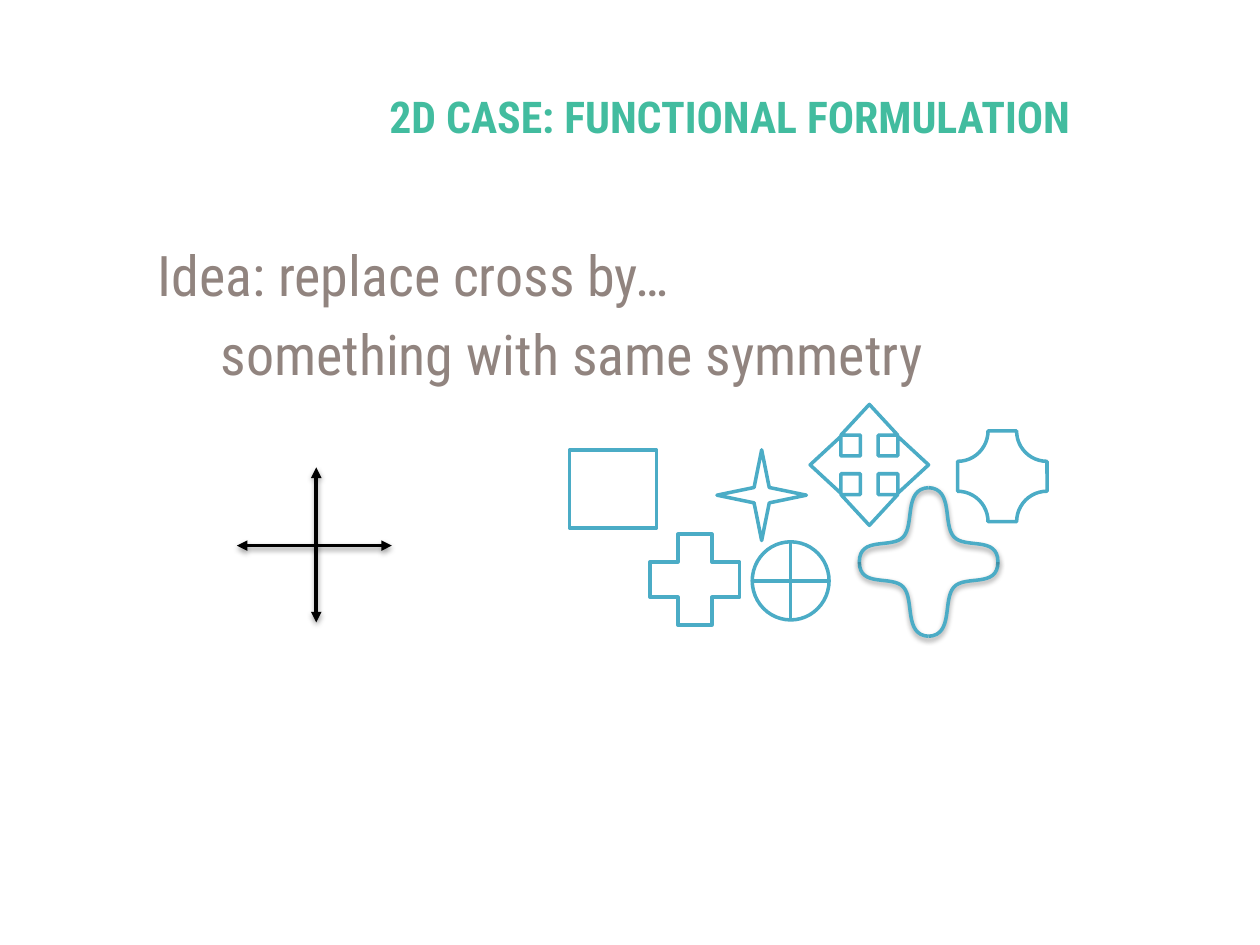
from dataclasses import dataclass
from itertools import product

from lxml import etree
from pptx import Presentation
from pptx.dml.color import RGBColor
from pptx.enum.shapes import MSO_CONNECTOR, MSO_SHAPE
from pptx.enum.text import MSO_ANCHOR, PP_ALIGN
from pptx.oxml import parse_xml
from pptx.oxml.ns import nsdecls, qn
from pptx.util import Emu, Pt

STRAIGHT = MSO_CONNECTOR.STRAIGHT
RECT = MSO_SHAPE.RECTANGLE
PLAQUE = MSO_SHAPE.PLAQUE
PLUS = MSO_SHAPE.CROSS
QUAD_ARROW = MSO_SHAPE.QUAD_ARROW
CIRCLE_CROSS = MSO_SHAPE.FLOWCHART_OR
STAR = MSO_SHAPE.STAR_4_POINT
LEFT = PP_ALIGN.LEFT
MIDDLE, TOP = MSO_ANCHOR.MIDDLE, MSO_ANCHOR.TOP
PX = 9144


@dataclass(frozen=True)
class Theme:
    font: str = "Roboto Condensed"
    title: RGBColor = RGBColor(0x42, 0xBC, 0x9F)
    body: RGBColor = RGBColor(0x91, 0x84, 0x7F)
    outline: RGBColor = RGBColor(0x4B, 0xAC, 0xC6)
    axis: RGBColor = RGBColor(0, 0, 0)
    paper: RGBColor = RGBColor(0xFF, 0xFF, 0xFF)
    title_size: Pt = Pt(25)
    body_size: Pt = Pt(32)
    stroke: Pt = Pt(2)


@dataclass(frozen=True)
class Symbol:
    kind: MSO_SHAPE
    x: int
    y: int
    w: int
    h: int
    adj: tuple[float, ...] = ()


THEME = Theme()
INDENTS = (0, 50)
AXES = ((188, 433, 311, 433), (251, 494, 251, 371))
CENTER = (737, 446)
LOBE = ((0, 59), (20, 58), (11, 30), (20, 20), (29, 10), (55, 21), (55, 0))
SYMBOLS = (
    Symbol(RECT, 452, 357, 69, 62),
    Symbol(PLAQUE, 760, 342, 71, 72, (0.34,)),
    Symbol(PLUS, 516, 424, 71, 72, (0.31,)),
    Symbol(QUAD_ARROW, 643, 321, 94, 96, (0.15, 0.24, 0.26)),
    Symbol(CIRCLE_CROSS, 597, 430, 61, 62),
    Symbol(STAR, 569, 357, 71, 72, (0.12,)),
)


def px(n: int) -> Emu:
    return Emu(n * PX)


def place(sp, x: int, y: int, w: int, h: int) -> None:
    sp.left, sp.top, sp.width, sp.height = px(x), px(y), px(w), px(h)


def format_text(sp, text: str, size: Pt, color: RGBColor, bold: bool, anchor) -> None:
    tf = sp.text_frame
    tf.text = text
    tf.word_wrap = True
    tf.vertical_anchor = anchor
    for p in tf.paragraphs:
        p.alignment = LEFT
        for r in p.runs:
            r.font.name = THEME.font
            r.font.size = size
            r.font.bold = bold
            r.font.color.rgb = color


def set_line(sp, color: RGBColor) -> None:
    sp.line.color.rgb = color
    sp.line.width = THEME.stroke


def add_shadow(sp) -> None:
    sp.element.spPr.append(parse_xml(
        f'<a:effectLst {nsdecls("a")}>'
        '<a:outerShdw blurRad="40000" dist="20000" dir="5400000" rotWithShape="0">'
        '<a:srgbClr val="000000"><a:alpha val="38000"/></a:srgbClr>'
        '</a:outerShdw></a:effectLst>'))


def add_axis(shapes, ends: tuple[int, ...]) -> None:
    cxn = shapes.add_connector(STRAIGHT, *map(px, ends))
    set_line(cxn, THEME.axis)
    ln = cxn.element.spPr.find(qn("a:ln"))
    for tag in ("a:headEnd", "a:tailEnd"):
        etree.SubElement(ln, qn(tag), type="triangle")
    add_shadow(cxn)


def curve_segments(sp) -> None:
    for outline in sp.element.iter(qn("a:path")):
        lines = outline.findall(qn("a:lnTo"))
        for i in range(0, len(lines), 3):
            curve = etree.SubElement(outline, qn("a:cubicBezTo"))
            for line in lines[i:i + 3]:
                curve.append(line[0])
                outline.remove(line)


def add_lobe(shapes, sx: int, sy: int) -> None:
    cx, cy = CENTER
    start, *rest = [(px(cx + sx * x), px(cy + sy * y)) for x, y in LOBE]
    builder = shapes.build_freeform(*start)
    builder.add_line_segments(rest, close=False)
    sp = builder.convert_to_shape()
    curve_segments(sp)
    sp.fill.background()
    set_line(sp, THEME.outline)
    add_shadow(sp)


def add_symbol(shapes, symbol: Symbol) -> None:
    box = map(px, (symbol.x, symbol.y, symbol.w, symbol.h))
    sp = shapes.add_shape(symbol.kind, *box)
    for i, value in enumerate(symbol.adj):
        sp.adjustments[i] = value
    sp.fill.solid()
    sp.fill.fore_color.rgb = THEME.paper
    set_line(sp, THEME.outline)
    sp.shadow.inherit = False


def add_texts(s) -> None:
    title, body = s.placeholders
    place(title, 299, 61, 667, 62)
    format_text(title, "2D CASE: FUNCTIONAL FORMULATION",
                THEME.title_size, THEME.title, True, MIDDLE)
    place(body, 115, 186, 777, 443)
    format_text(body, "Idea: replace cross by…\nsomething with same symmetry",
                THEME.body_size, THEME.body, False, TOP)
    for i, (p, indent) in enumerate(zip(body.text_frame.paragraphs, INDENTS)):
        p.space_before = Pt(6.4 if i else 0)
        pPr = p._p.get_or_add_pPr()
        pPr.set("marL", str(px(indent)))
        pPr.set("indent", "0")
        etree.SubElement(pPr, qn("a:buNone"))


def main() -> None:
    prs = Presentation()
    prs.slide_width, prs.slide_height = px(1000), px(750)
    s = prs.slides.add_slide(prs.slide_layouts[1])
    add_texts(s)
    cross = s.shapes.add_group_shape()
    for ends in AXES:
        add_axis(cross.shapes, ends)
    blob = s.shapes.add_group_shape()
    for sx, sy in product((1, -1), repeat=2):
        add_lobe(blob.shapes, sx, sy)
    for symbol in SYMBOLS:
        add_symbol(s.shapes, symbol)
    prs.save("out.pptx")


if __name__ == "__main__":
    main()
